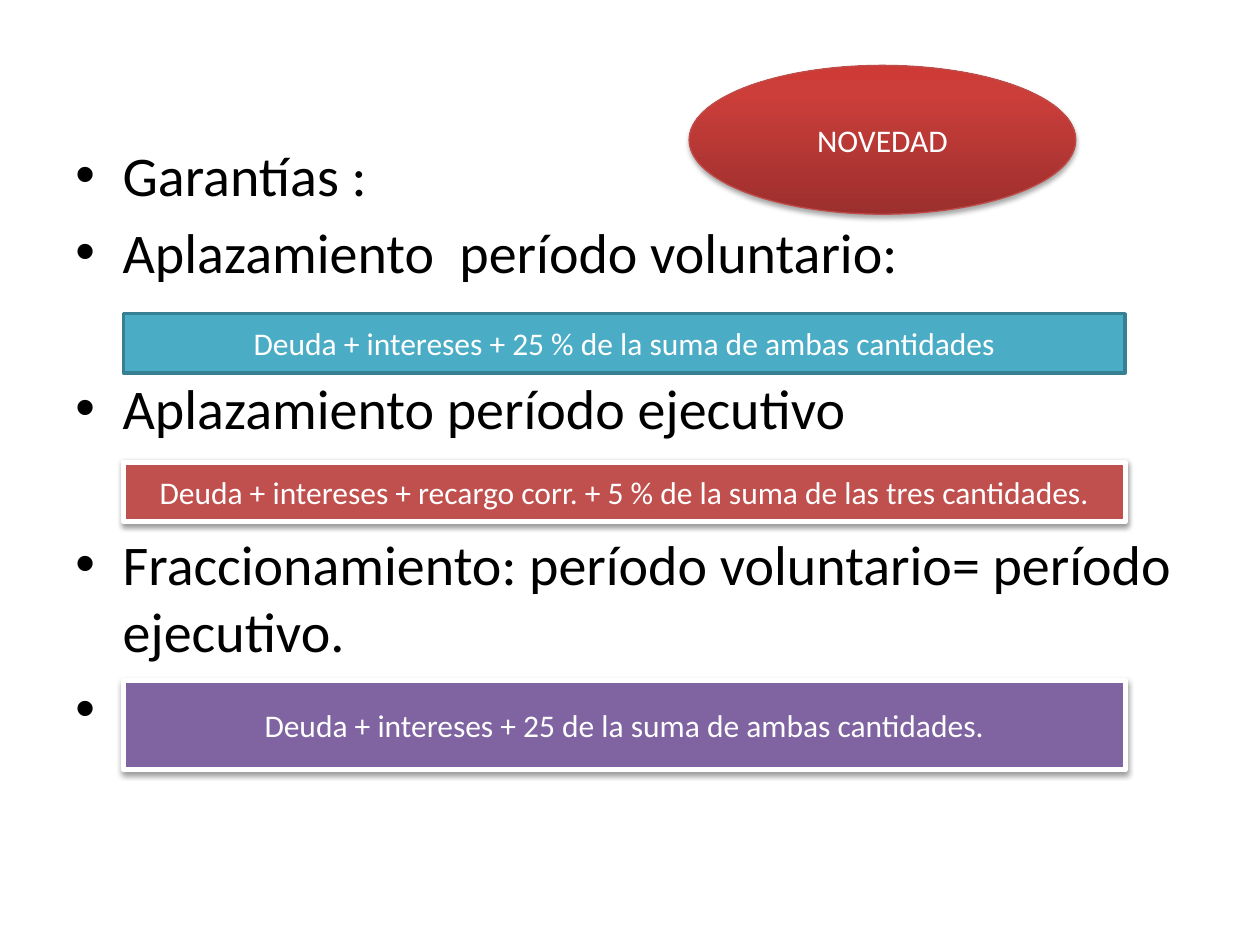
"""Build a slide on the guarantees needed to defer or split a debt."""
from copy import deepcopy

from lxml import etree
from pptx import Presentation
from pptx.dml.color import RGBColor
from pptx.enum.shapes import MSO_SHAPE
from pptx.enum.text import MSO_ANCHOR, PP_ALIGN
from pptx.oxml.ns import qn
from pptx.util import Pt

RECTANGLE, OVAL = MSO_SHAPE.RECTANGLE, MSO_SHAPE.OVAL
MIDDLE, TOP = MSO_ANCHOR.MIDDLE, MSO_ANCHOR.TOP
CENTER = PP_ALIGN.CENTER

FONT = "Calibri"
COLORS = {
    "black": "000000", "white": "FFFFFF", "teal": "4BACC6", "dark teal": "377F92",
    "red": "C0504D", "purple": "8064A2", "oval line": "BF4C48",
}
OVAL_STOPS = [(0, "9C2F2D"), (0.8, "CB3E3A"), (1, "CE3B37")]
LINE_HEIGHT, PARA_GAP = 39.06, 5.8
SKIPPED_LINE = LINE_HEIGHT + PARA_GAP

BULLETS = [
    ("Garantías :", 0),
    ("Aplazamiento  período voluntario:", PARA_GAP),
    ("Aplazamiento período ejecutivo", PARA_GAP + SKIPPED_LINE),
    ("Fraccionamiento: período voluntario= período ejecutivo.", PARA_GAP + SKIPPED_LINE),
    (" ", PARA_GAP),
]
BAR_LEFT, BAR_WIDTH = 70.6, 572.4
BARS = [
    ("Deuda + intereses + 25 de la suma de ambas cantidades.",
     388.8, 51.1, "purple", "white", 3, True),
    ("Deuda + intereses + 25 % de la suma de ambas cantidades",
     179.3, 33.8, "teal", "dark teal", 2, False),
    ("Deuda + intereses + recargo corr. + 5 % de la suma de las tres cantidades.",
     264.2, 33.8, "red", "white", 3, True),
]


def rgb(name):
    return RGBColor.from_string(COLORS[name])


def style_font(font, size, color):
    font.name, font.size = FONT, Pt(size)
    font.color.rgb = rgb(color)


def add_bullets(page):
    box = page.shapes.add_textbox(Pt(36), Pt(31.7), Pt(648), Pt(450.7))
    frame = box.text_frame
    frame.word_wrap, frame.vertical_anchor = True, TOP
    frame.margin_top = Pt(3.6 + SKIPPED_LINE)
    for index, (text, gap) in enumerate(BULLETS):
        para = frame.add_paragraph() if index else frame.paragraphs[0]
        para.add_run().text = text
        para.space_before = Pt(gap)
        style_font(para.font, 32, "black")
        properties = para._p.get_or_add_pPr()
        properties.set("marL", str(Pt(27)))
        properties.set("indent", str(-Pt(27)))
        bullet_font = etree.Element(qn("a:buFont"), typeface="Arial")
        bullet = etree.Element(qn("a:buChar"), char="•")
        properties.find(qn("a:defRPr")).addprevious(bullet_font)
        bullet_font.addnext(bullet)


def add_label(page, kind, text, bounds, line_color, line_width):
    shape = page.shapes.add_shape(kind, *map(Pt, bounds))
    shape.shadow.inherit = False
    shape.line.color.rgb = rgb(line_color)
    shape.line.width = Pt(line_width)
    frame = shape.text_frame
    frame.word_wrap, frame.vertical_anchor = True, MIDDLE
    para = frame.paragraphs[0]
    para.add_run().text = text
    para.alignment = CENTER
    style_font(para.font, 18, "white")
    return shape


def add_shadow(shape, distance, opacity):
    effects = shape._element.spPr.find(qn("a:effectLst"))
    shadow = etree.SubElement(
        effects, qn("a:outerShdw"), blurRad=str(Pt(3.1)), dist=str(Pt(distance)),
        dir="5400000", rotWithShape="0")
    color = etree.SubElement(shadow, qn("a:srgbClr"), val=COLORS["black"])
    etree.SubElement(color, qn("a:alpha"), val=str(opacity * 1000))


def fill_gradient(shape, stops):
    shape.fill.gradient()
    shape.fill.gradient_angle = 90
    stop_list = shape._element.spPr.find(".//" + qn("a:gsLst"))
    while len(stop_list) < len(stops):
        stop_list.append(deepcopy(stop_list[0]))
    for stop, (position, color) in zip(shape.fill.gradient_stops, stops):
        stop.position = position
        stop.color.rgb = RGBColor.from_string(color)


def main():
    deck = Presentation()
    deck.slide_width, deck.slide_height = Pt(720), Pt(540)
    page = deck.slides.add_slide(deck.slide_layouts[6])
    add_bullets(page)
    for text, top, height, color, line_color, line_width, shadowed in BARS:
        bar = add_label(page, RECTANGLE, text, (BAR_LEFT, top, BAR_WIDTH, height),
                        line_color, line_width)
        bar.fill.solid()
        bar.fill.fore_color.rgb = rgb(color)
        if shadowed:
            add_shadow(bar, 1.6, 38)
    badge = add_label(page, OVAL, "NOVEDAD", (393.8, 37.4, 221, 85), "oval line", 0.75)
    fill_gradient(badge, OVAL_STOPS)
    add_shadow(badge, 1.8, 35)
    deck.save("out.pptx")


if __name__ == "__main__":
    main()
